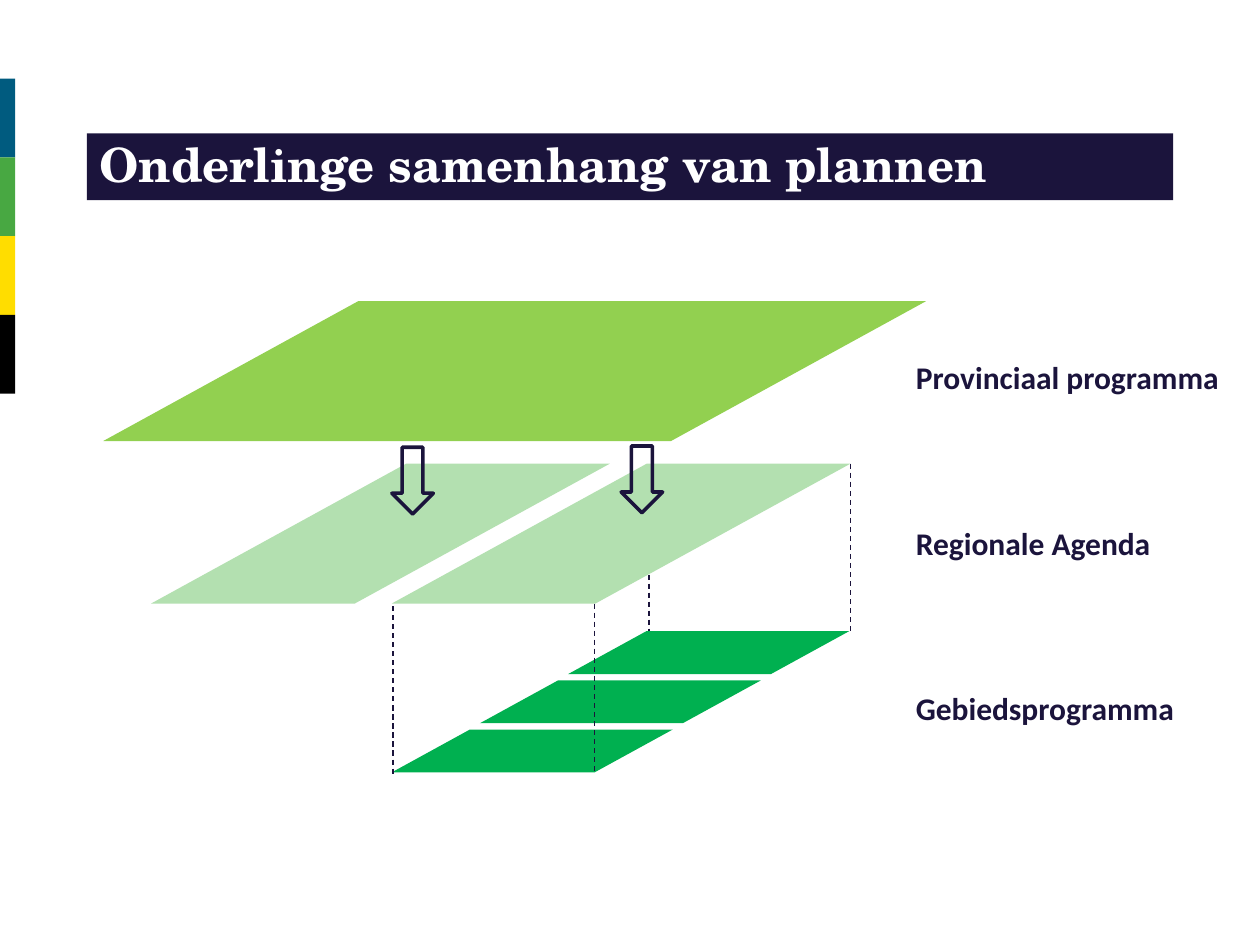
from dataclasses import dataclass

from lxml import etree
from pptx import Presentation
from pptx.dml.color import RGBColor
from pptx.enum.dml import MSO_LINE
from pptx.enum.shapes import MSO_CONNECTOR, MSO_SHAPE
from pptx.enum.text import MSO_ANCHOR, PP_ALIGN
from pptx.oxml.ns import qn
from pptx.util import Inches, Pt

RECTANGLE = MSO_SHAPE.RECTANGLE
PARALLELOGRAM = MSO_SHAPE.PARALLELOGRAM
DOWN_ARROW = MSO_SHAPE.DOWN_ARROW
STRAIGHT = MSO_CONNECTOR.STRAIGHT
DASH = MSO_LINE.DASH
LEFT = PP_ALIGN.LEFT
MIDDLE = MSO_ANCHOR.MIDDLE
TOP = MSO_ANCHOR.TOP


@dataclass(frozen=True)
class Theme:
    navy: str = "1B143C"
    white: str = "FFFFFF"
    province: str = "92D050"
    region: str = "B3E0B0"
    area: str = "00B050"
    stripes: tuple = ("005B7F", "48A842", "FFDD00", "000000")
    title_font: str = "TeX Gyre Schola"
    label_font: str = "Calibri"
    title_size: int = 27
    label_size: int = 18
    arrow_width: float = 2
    guide_width: float = 0.75


THEME = Theme()
SLANT = 1.823


def color(value):
    return RGBColor.from_string(value)


def add_figure(page, kind, place, fill=None, outline=None):
    figure = page.shapes.add_shape(kind, *map(Inches, place))
    figure.shadow.inherit = False
    if fill:
        figure.fill.solid()
        figure.fill.fore_color.rgb = color(fill)
    else:
        figure.fill.background()
    if outline:
        figure.line.color.rgb = color(outline)
        figure.line.width = Pt(THEME.arrow_width)
    else:
        figure.line.fill.background()
    return figure


def add_plane(page, place, fill):
    plane = add_figure(page, PARALLELOGRAM, place, fill)
    plane.adjustments[0] = SLANT


def write_text(box, text, size, font, ink, anchor=TOP, spacing=None):
    frame = box.text_frame
    frame.word_wrap = True
    frame.vertical_anchor = anchor
    para = frame.paragraphs[0]
    para.alignment = LEFT
    para.line_spacing = spacing
    span = para.add_run()
    span.text = text
    formats = {"name": font, "size": Pt(size), "bold": True}
    for name, value in formats.items():
        setattr(span.font, name, value)
    span.font.color.rgb = color(ink)


def add_title(page, text):
    bar = add_figure(page, RECTANGLE, (0.69, 1.06, 8.62, 0.53), THEME.navy)
    write_text(bar, text, THEME.title_size, THEME.title_font, THEME.white,
               MIDDLE, 0.9)


def add_label(page, text, top, width):
    box = page.shapes.add_textbox(*map(Inches, (7.17, top, width, 0.4)))
    write_text(box, text, THEME.label_size, THEME.label_font, THEME.navy)


def add_guide(page, x, top, bottom):
    """Dashed vertical line that ties a region to its areas."""
    guide = page.shapes.add_connector(STRAIGHT, *map(Inches, (x, top, x, bottom)))
    guide.line.color.rgb = color(THEME.navy)
    guide.line.width = Pt(THEME.guide_width)
    guide.line.dash_style = DASH
    etree.SubElement(guide._element.spPr, qn("a:effectLst"))


def main():
    deck = Presentation()
    deck.slide_width, deck.slide_height = Inches(10), Inches(7.5)
    page = deck.slides.add_slide(deck.slide_layouts[6])

    stripe_height = 0.625
    for index, fill in enumerate(THEME.stripes, start=1):
        add_figure(page, RECTANGLE,
                   (0, index * stripe_height, 0.12, stripe_height), fill)

    add_title(page, "Onderlinge samenhang van plannen")
    for text, top, width in (("Provinciaal programma", 2.79, 2.76),
                             ("Regionale Agenda", 4.11, 2.33),
                             ("Gebiedsprogramma", 5.42, 2.33)):
        add_label(page, text, top, width)

    add_plane(page, (0.82, 2.39, 6.53, 1.11), THEME.province)
    for left in (3.11, 1.2):
        add_plane(page, (left, 3.68, 3.64, 1.11), THEME.region)
    for row in range(3):
        add_plane(page, (4.51 - row * 0.7, 5.01 + row * 0.39, 2.23, 0.34),
                  THEME.area)

    for x, top, bottom in ((6.75, 3.68, 5.01), (5.15, 4.56, 5.01),
                           (3.12, 4.81, 6.14), (4.72, 4.79, 6.12)):
        add_guide(page, x, top, bottom)
    for left, top in ((3.11, 3.55), (4.93, 3.54)):
        add_figure(page, DOWN_ARROW, (left, top, 0.33, 0.53),
                   outline=THEME.navy)

    deck.save("out.pptx")


if __name__ == "__main__":
    main()
